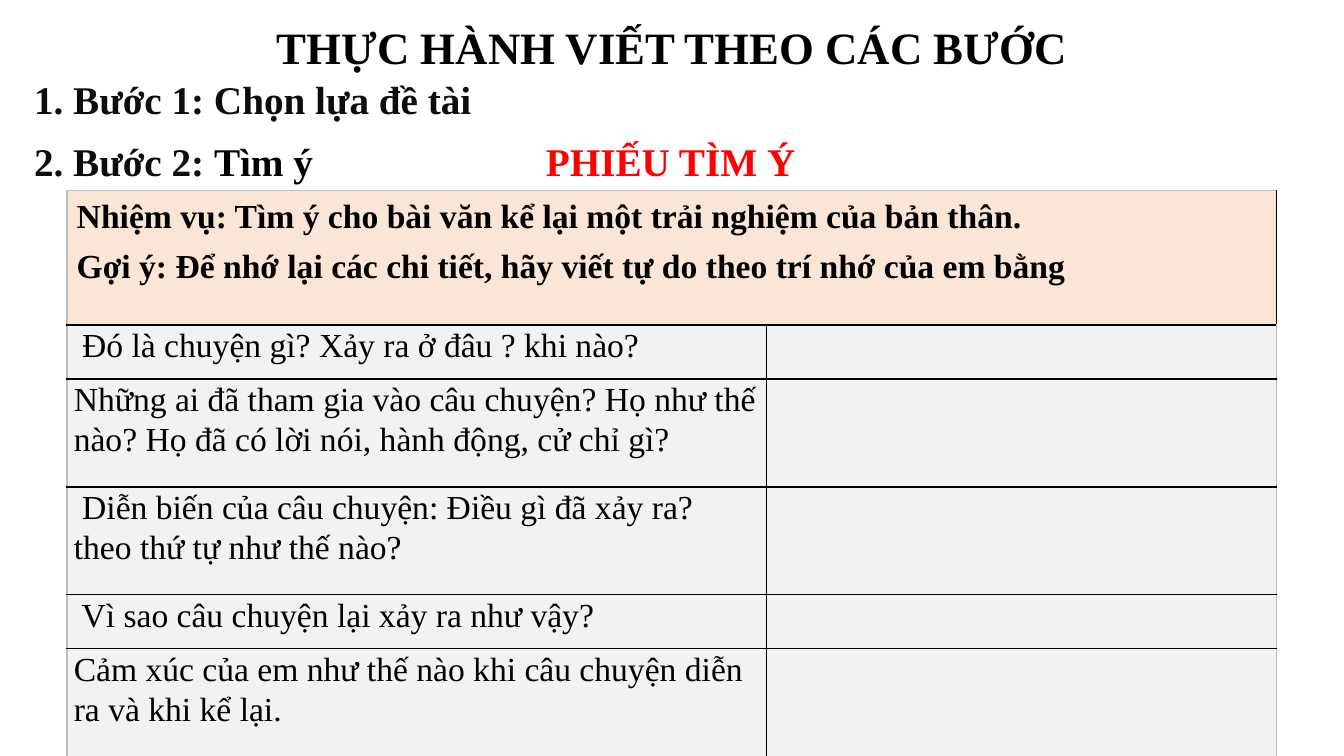
from lxml.etree import SubElement
from pptx import Presentation
from pptx.dml.color import RGBColor
from pptx.enum.text import MSO_AUTO_SIZE as AutoSize, PP_ALIGN as Align
from pptx.oxml.ns import qn
from pptx.util import Cm, Pt

FONT = "Times New Roman"
BLACK, DARK, RED = "000000", "0D0D0D", "FF0000"
PEACH, PALE, GREY = "FBE5D6", "F2F2F2", "BFBFBF"

TITLE = [[("THỰC HÀNH VIẾT THEO CÁC BƯỚC", BLACK)]]
STEPS = [
    [("1. Bước 1: Chọn lựa đề tài", DARK)],
    [("2. Bước 2: ", DARK), ("Tìm ý", BLACK)],
]
SHEET_NAME = [[("PHIẾU TÌM Ý", RED)]]
TASK = [
    "Nhiệm vụ: Tìm ý cho bài văn kể lại một trải nghiệm của bản thân.",
    "Gợi ý: Để nhớ lại các chi tiết, hãy viết tự do theo trí nhớ của em bằng",
]
QUESTIONS = [
    [" Đó là chuyện gì? Xảy ra ở đâu ? khi nào?"],
    ["Những ai đã tham gia vào câu chuyện? Họ như thế nào? Họ đã có lời nói, hành động, cử chỉ gì?"],
    [" Diễn biến của câu chuyện: Điều gì đã xảy ra?", "theo thứ tự như thế nào?"],
    [" Vì sao câu chuyện lại xảy ra như vậy?"],
    ["Cảm xúc của em như thế nào khi câu chuyện diễn ra và khi kể lại."],
]
COLUMN_WIDTHS = [17.63, 12.86]
SINGLE, DOUBLE = 1.36, 2.72
ROW_HEIGHTS = [3.39, SINGLE, DOUBLE, DOUBLE, SINGLE, DOUBLE]


def color(value):
    return RGBColor.from_string(value)


def write(frame, paragraphs, size, bold=True, align=Align.LEFT, spacing=None, after=0):
    for index, runs in enumerate(paragraphs):
        paragraph = frame.add_paragraph() if index else frame.paragraphs[0]
        paragraph.alignment = align
        paragraph.space_after = Pt(after)
        if spacing:
            paragraph.line_spacing = spacing
        for text, tint in runs:
            run = paragraph.add_run()
            run.text = text
            font = run.font
            font.name, font.size, font.bold = FONT, Pt(size), bold
            font.color.rgb = color(tint)


def add_text(slide, box, paragraphs, size, wrap=False, **text_format):
    frame = slide.shapes.add_textbox(*map(Cm, box)).text_frame
    frame.word_wrap = wrap
    frame.auto_size = AutoSize.SHAPE_TO_FIT_TEXT
    write(frame, paragraphs, size, **text_format)


def add_borders(cell, outer_sides):
    properties = cell._tc.get_or_add_tcPr()
    for side in "LRTB":
        outer = side in outer_sides
        line = SubElement(properties, qn(f"a:ln{side}"), w=str(Pt(1.5 if outer else 1)))
        fill = SubElement(line, qn("a:solidFill"))
        SubElement(fill, qn("a:srgbClr"), val=GREY if outer else BLACK)


def add_sheet(slide):
    rows, columns = len(ROW_HEIGHTS), len(COLUMN_WIDTHS)
    table = slide.shapes.add_table(
        rows, columns, Cm(1.68), Cm(4.8), Cm(sum(COLUMN_WIDTHS)), Cm(sum(ROW_HEIGHTS))
    ).table
    table.first_row = table.horz_banding = False
    for column, width in zip(table.columns, COLUMN_WIDTHS):
        column.width = Cm(width)
    for row_index, height in enumerate(ROW_HEIGHTS):
        table.rows[row_index].height = Cm(height)
        for column_index in range(columns):
            cell = table.cell(row_index, column_index)
            sides = "R" if column_index else "L"
            sides += "T" if row_index == 0 else ""
            sides += "B" if row_index == rows - 1 else ""
            add_borders(cell, sides)
            cell.fill.solid()
            cell.fill.fore_color.rgb = color(PALE if row_index else PEACH)

    heading = table.cell(0, 0)
    heading.merge(table.cell(0, columns - 1))
    write(heading.text_frame, [[(text, BLACK)] for text in TASK], 24, spacing=1.07, after=8)
    for row_index, question in enumerate(QUESTIONS, 1):
        cell = table.cell(row_index, 0)
        cell.margin_left = cell.margin_right = Cm(0.18)
        cell.margin_top = cell.margin_bottom = 0
        write(cell.text_frame, [[(text, BLACK)] for text in question], 24, bold=False, spacing=1.07)


def main():
    presentation = Presentation()
    presentation.slide_width, presentation.slide_height = Cm(33.87), Cm(19.05)
    slide = presentation.slides.add_slide(presentation.slide_layouts[6])
    add_text(slide, (6.63, 0.38, 20.62, 1.63), TITLE, 32, align=Align.CENTER)
    add_text(slide, (0.61, 1.7, 16.94, 3.1), STEPS, 28, wrap=True, spacing=1.07, after=8)
    add_text(slide, (13.51, 3.33, 6.86, 1.45), SHEET_NAME, 28)
    add_sheet(slide)
    presentation.save("out.pptx")


if __name__ == "__main__":
    main()
